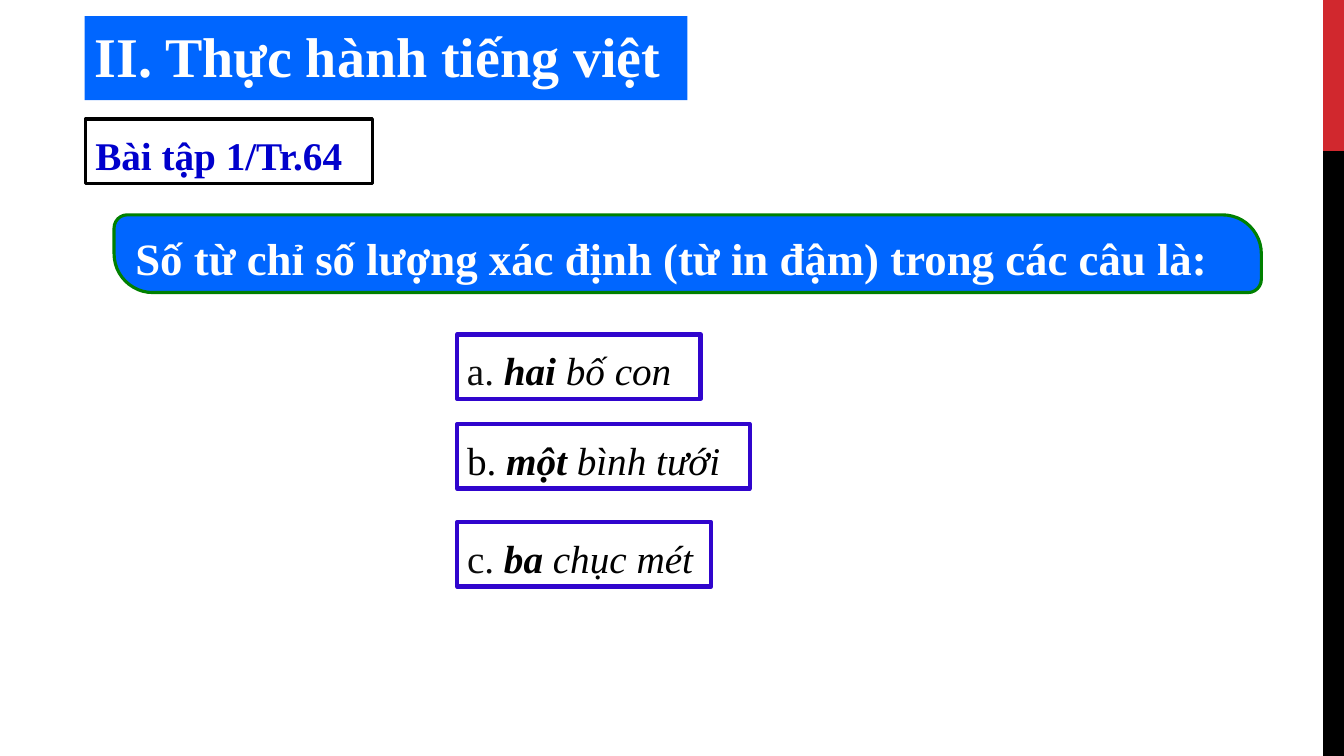
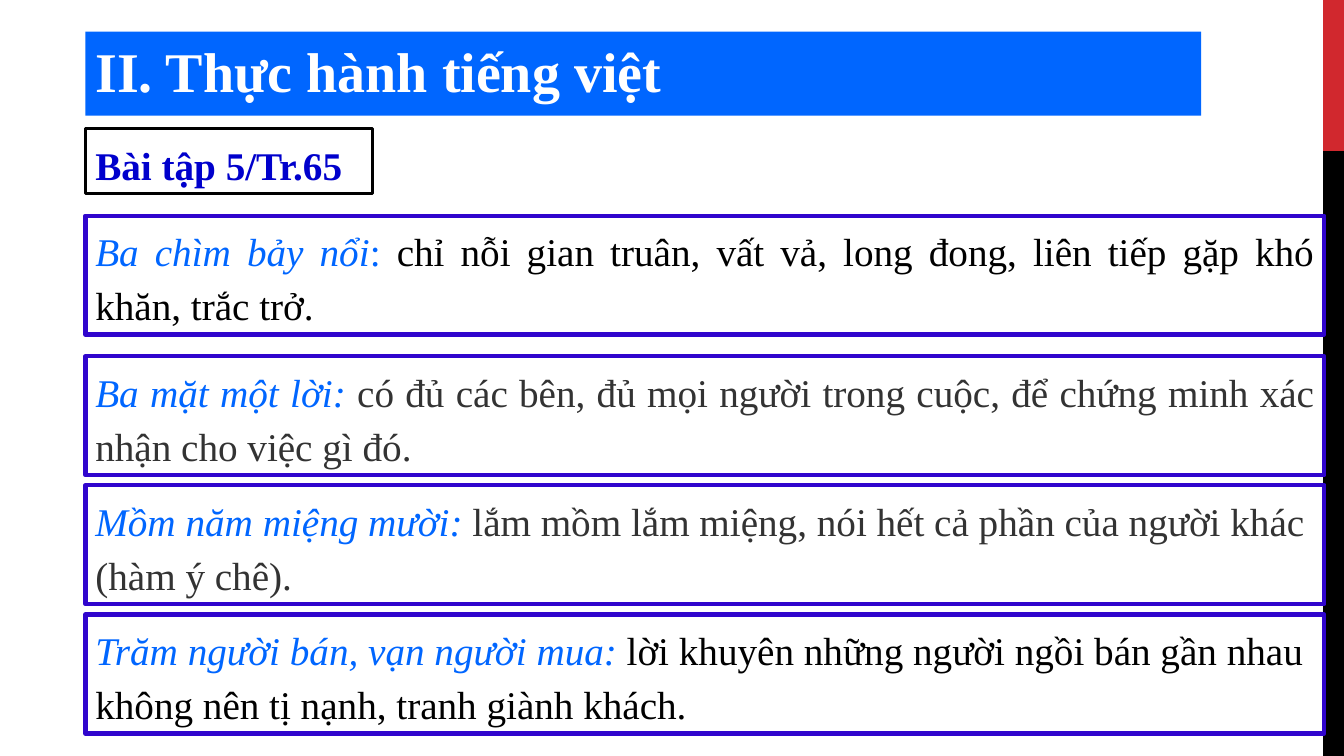
from dataclasses import dataclass
from typing import NamedTuple

from pptx import Presentation
from pptx.dml.color import RGBColor
from pptx.enum.shapes import MSO_SHAPE as SHAPE
from pptx.enum.text import MSO_ANCHOR as ANCHOR, MSO_AUTO_SIZE as AUTO_SIZE, PP_ALIGN as ALIGN
from pptx.util import Pt

FONT = "Times New Roman"
COLORS = {
    "white": "FFFFFF",
    "black": "000000",
    "ink": "0D0D0D",
    "gray": "333333",
    "red": "D1282E",
    "blue": "0066FF",
    "navy": "0000CC",
    "violet": "3005CD",
    "green": "008000",
}
SLIDE_W, SLIDE_H = 960, 540
BAND_W, RED_H = 15, 108
LEFT = 61
ROW_H = 46


class Run(NamedTuple):
    text: str
    color: str = "black"
    bold: bool = False
    italic: bool = False


class Rect(NamedTuple):
    left: float
    top: float
    width: float
    height: float


@dataclass
class Answer:
    top: float
    width: float
    runs: list[Run]
    align: ALIGN = ALIGN.JUSTIFY


ANSWERS = [
    Answer(239, 174, [Run("a. ", "ink"), Run("hai ", bold=True, italic=True),
                      Run("bố con", italic=True)]),
    Answer(303, 209, [Run("b. "), Run("một ", bold=True, italic=True),
                      Run("bình tưới", italic=True)], ALIGN.LEFT),
    Answer(373, 181.5, [Run("c. ", "ink"), Run("ba ", bold=True, italic=True),
                        Run("chục mét", italic=True)]),
]
IDIOM_W = 885
IDIOMS = [
    Answer(154, IDIOM_W, [
        Run("Ba chìm bảy nổi", "blue", italic=True), Run(": ", "blue"),
        Run("chỉ nỗi gian truân, vất vả, long đong, liên tiếp gặp khó khăn, trắc trở.")]),
    Answer(254.5, IDIOM_W, [
        Run("Ba mặt một lời: ", "blue", italic=True),
        Run("có đủ các bên, đủ mọi người trong cuộc, để chứng minh xác nhận cho việc gì đó.",
            "gray")]),
    Answer(346.5, IDIOM_W, [
        Run("Mồm năm miệng mười: ", "blue", italic=True),
        Run("lắm mồm lắm miệng, nói hết cả phần của người khác (hàm ý chê).", "gray")],
        ALIGN.LEFT),
    Answer(439, IDIOM_W, [
        Run("Trăm người bán, vạn người mua: ", "blue", italic=True),
        Run("lời khuyên những người ngồi bán gần nhau không nên tị nạnh, tranh giành khách.")],
        ALIGN.LEFT),
]


def rgb(name: str) -> RGBColor:
    return RGBColor.from_string(COLORS[name])


def write(sp, runs: list[Run], *, size: float = 28, align: ALIGN = ALIGN.JUSTIFY,
          line_spacing: float = 1.15, gap: float = 6, anchor: ANCHOR = ANCHOR.TOP,
          auto_size: AUTO_SIZE = AUTO_SIZE.SHAPE_TO_FIT_TEXT) -> None:
    tf = sp.text_frame
    tf.word_wrap = True
    tf.auto_size = auto_size
    tf.vertical_anchor = anchor
    p = tf.paragraphs[0]
    p.alignment = align
    p.line_spacing = line_spacing
    p.space_before = p.space_after = Pt(gap)
    for run in runs:
        r = p.add_run()
        r.text = run.text
        r.font.name, r.font.size = FONT, Pt(size)
        r.font.bold, r.font.italic = run.bold, run.italic
        r.font.color.rgb = rgb(run.color)


def add_box(slide, rect: Rect, *, kind: SHAPE = SHAPE.RECTANGLE, fill: str | None = None,
            line: str | None = None, weight: float = 2.25):
    sp = slide.shapes.add_shape(kind, *map(Pt, rect))
    sp.shadow.inherit = False
    if fill:
        sp.fill.solid()
        sp.fill.fore_color.rgb = rgb(fill)
    else:
        sp.fill.background()
    if line:
        sp.line.color.rgb = rgb(line)
        sp.line.width = Pt(weight)
    else:
        sp.line.fill.background()
    return sp


def add_lesson_slide(prs, title_rect: Rect, exercise: str, exercise_top: float):
    """Add a slide with the side bands, the lesson title and the exercise label."""
    slide = prs.slides.add_slide(prs.slide_layouts[5])
    band_left = SLIDE_W - BAND_W
    add_box(slide, Rect(band_left, 0, BAND_W, RED_H), fill="red")
    add_box(slide, Rect(band_left, RED_H, BAND_W, SLIDE_H - RED_H), fill="black")

    title = slide.shapes.title
    title.left, title.top, title.width, title.height = map(Pt, title_rect)
    title.fill.solid()
    title.fill.fore_color.rgb = rgb("blue")
    write(title, [Run("II. Thực hành tiếng việt", "white", bold=True)], size=40,
          align=ALIGN.LEFT, line_spacing=1.0, gap=0)

    label = add_box(slide, Rect(LEFT, exercise_top, 205, ROW_H), line="black")
    write(label, [Run(exercise, "navy", bold=True)])
    return slide


def add_answers(slide, answers: list[Answer], left: float, height: float) -> None:
    for answer in answers:
        sp = add_box(slide, Rect(left, answer.top, answer.width, height),
                     line="violet", weight=3)
        write(sp, answer.runs, align=answer.align)


def build_numerals(prs) -> None:
    slide = add_lesson_slide(prs, Rect(60.5, 11.5, 430.5, 55.5), "Bài tập 1/Tr.64", 85)
    banner = add_box(slide, Rect(81.5, 153.5, 819.5, 55.5),
                     kind=SHAPE.ROUND_2_DIAG_RECTANGLE, fill="blue", line="green")
    banner.adjustments[0], banner.adjustments[1] = 0.17, 0.5
    write(banner, [Run("Số từ chỉ số lượng xác định (từ in đậm) trong các câu là:",
                       "white", bold=True)],
          size=32, anchor=ANCHOR.MIDDLE, auto_size=AUTO_SIZE.NONE)
    add_answers(slide, ANSWERS, 326.5, ROW_H)


def build_idioms(prs) -> None:
    slide = add_lesson_slide(prs, Rect(LEFT, 22.5, 797, 55.5), "Bài tập 5/Tr.65", 92)
    add_answers(slide, IDIOMS, LEFT, 85)


def main() -> None:
    prs = Presentation()
    prs.slide_width, prs.slide_height = Pt(SLIDE_W), Pt(SLIDE_H)
    build_numerals(prs)
    build_idioms(prs)
    prs.save("out.pptx")


if __name__ == "__main__":
    main()
